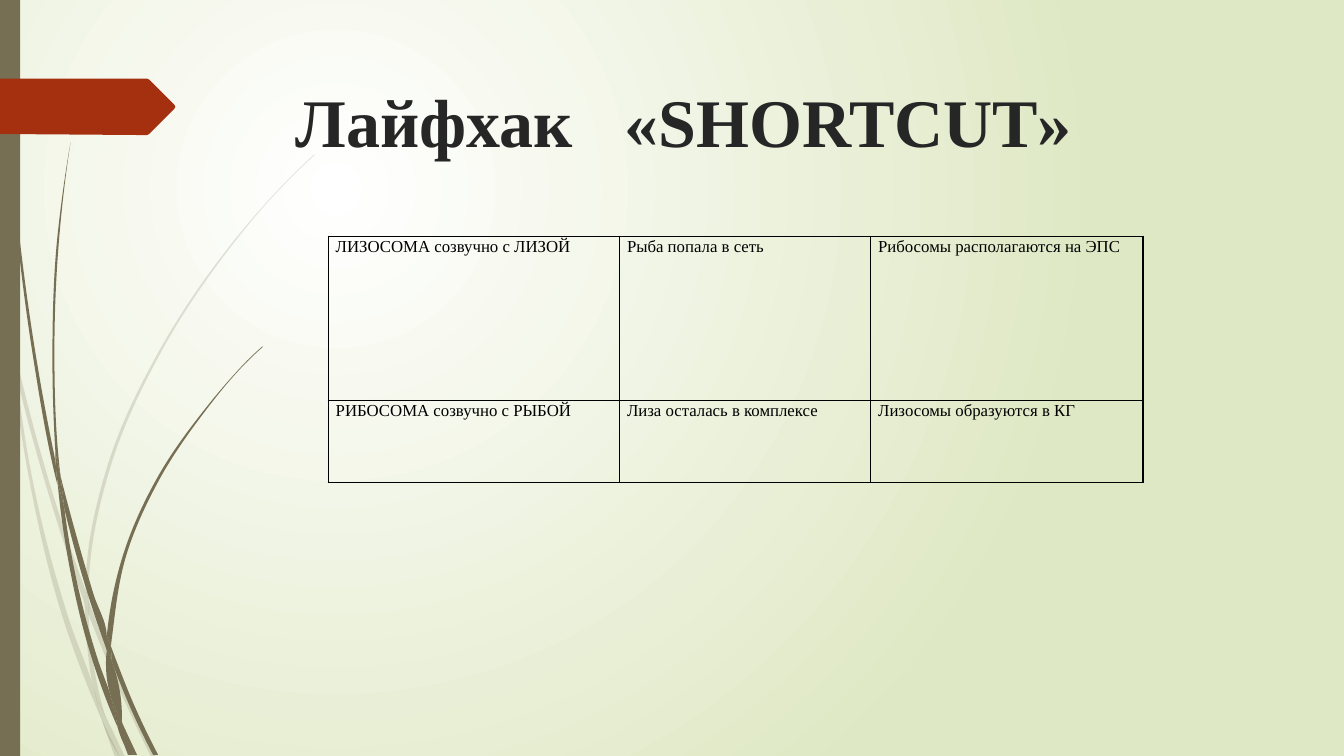
"""Builds the biology mnemonic slide with its grass decoration and table."""
from dataclasses import dataclass
from lxml import etree
from pptx import Presentation
from pptx import util as u
from pptx.dml import color
from pptx.enum import shapes, text
from pptx.oxml import ns

COLORS: dict[str, str] = {
    "glow": "FFFFFF", "meadow": "DFE8C4", "grass": "766F54",
    "marker": "A53010", "heading": "262626", "ink": "000000",
}
FONT = "Times New Roman"
GRID = u.Pt(0.72)
FINENESS = 100
Points = list[tuple[int, int]]


@dataclass(frozen=True)
class Blade:
    """A piece of grass: one edge going out and the other coming back."""
    out: Points
    back: Points


@dataclass(frozen=True)
class Tuft:
    """Blades that share one opacity in percent."""
    opacity: int
    blades: list[Blade]


PALE = Tuft(20, [
    Blade([(11, 350), (9, 322), (0, 282)], [(0, 299), (10, 344)]),
    Blade([(17, 376), (58, 522), (84, 599)], [(85, 586), (62, 520), (14, 345)]),
    Blade([(88, 610), (123, 694), (150, 751)],
          [(155, 751), (127, 692), (92, 607), (88, 596)]),
    Blade([(105, 711), (119, 751)], [(124, 751)]),
    Blade([(11, 350), (28, 470), (65, 621), (92, 693), (101, 714)],
          [(99, 707), (93, 683), (70, 619), (31, 469), (17, 376)]),
    Blade([(84, 599), (87, 646), (93, 683), (96, 692), (105, 711)],
          [(103, 706), (91, 646), (88, 610), (88, 608)]),
    Blade([(85, 586), (85, 584), (107, 461), (158, 348), (228, 244),
           (268, 197), (289, 175), (312, 153)],
          [(312, 154), (290, 175), (268, 198), (229, 245), (160, 349),
           (110, 462), (88, 584), (88, 596)]),
    Blade([(101, 714), (114, 751)], [(119, 751)]),
    Blade([(84, 599), (88, 608)], [(88, 610), (88, 596), (85, 586)]),
    Blade([(93, 683), (99, 707), (101, 714), (119, 751)], [(105, 711), (96, 692)]),
])
DARK = Tuft(100, [
    Blade([(3, 0), (4, 48), (7, 110), (17, 233), (33, 355), (56, 477), (57, 481)],
          [(55, 457), (36, 355), (19, 232), (8, 109), (5, 48), (4, 0)]),
    Blade([(64, 505), (88, 592), (106, 645)],
          [(106, 633), (106, 631), (93, 590), (60, 472)]),
    Blade([(111, 656), (132, 708), (152, 749)],
          [(157, 749), (136, 706), (113, 649), (110, 641)]),
    Blade([(57, 477), (68, 557), (93, 659), (111, 708), (117, 722)],
          [(116, 717), (110, 691), (98, 657), (72, 556), (64, 505)]),
    Blade([(60, 472), (58, 453), (54, 349), (58, 245), (63, 193), (70, 141)],
          [(70, 141), (62, 193), (56, 245), (52, 349), (55, 449)]),
    Blade([(122, 719), (133, 749)], [(136, 749)]),
    Blade([(55, 449), (55, 453), (57, 477)], [(64, 505), (60, 472)]),
    Blade([(106, 631), (122, 551), (156, 474), (204, 405), (231, 373),
           (245, 358), (260, 344)],
          [(261, 344), (245, 359), (231, 374), (205, 406), (158, 476),
           (125, 552), (111, 633), (110, 641)]),
    Blade([(117, 722), (127, 749)], [(131, 749)]),
    Blade([(106, 645), (110, 691), (116, 706), (122, 719)],
          [(121, 716), (111, 656), (109, 651)]),
    Blade([(106, 631), (106, 645), (109, 651), (111, 656)], [(110, 641)]),
    Blade([(110, 691), (116, 717), (117, 722), (130, 749)],
          [(133, 749), (122, 719), (116, 706)]),
])
MARKER: Points = [(0, 78), (146, 78), (148, 79), (173, 104), (174, 106),
                  (173, 108), (148, 133), (146, 134), (136, 134), (0, 133)]
MNEMONICS = [
    ["ЛИЗОСОМА созвучно с ЛИЗОЙ", "Рыба попала в сеть", "Рибосомы располагаются на ЭПС"],
    ["РИБОСОМА созвучно с РЫБОЙ", "Лиза осталась в комплексе", "Лизосомы образуются в КГ"],
]
COLUMN_WIDTHS = [208.1, 179.4, 194.6]
ROW_HEIGHTS = [117.1, 58.6]


def rgb(name: str) -> color.RGBColor:
    """Look a colour up by name."""
    return color.RGBColor.from_string(COLORS[name])


def edge_handles(edge: Points) -> list[tuple[complex, complex]]:
    """Return the Bezier handles of each segment, relative to its ends."""
    steps = [complex(*b) - complex(*a) for a, b in zip(edge, edge[1:])]
    if not steps:
        return []
    sizes = [abs(step) for step in steps]
    ways = [step / size for step, size in zip(steps, sizes)]
    inner = [(ways[i] * sizes[i + 1] + ways[i + 1] * sizes[i]) / (sizes[i] + sizes[i + 1])
             for i in range(len(steps) - 1)]
    first = 2 * ways[0] - inner[0] if inner else ways[0]
    final = 2 * ways[-1] - inner[-1] if inner else ways[-1]
    slopes = [first, *inner, final]
    return [(a * size / 3, -b * size / 3) for a, b, size in zip(slopes, slopes[1:], sizes)]


def paint(shape, name: str, opacity: int = 100) -> None:
    """Give a shape a flat fill without line or shadow."""
    shape.shadow.inherit = False
    shape.line.fill.background()
    shape.fill.solid()
    shape.fill.fore_color.rgb = rgb(name)
    if opacity < 100:
        tone = shape.element.find(".//" + ns.qn("a:srgbClr"))
        etree.SubElement(tone, ns.qn("a:alpha"), val=str(opacity * 1000))


def draw_outline(parent, points: Points, name: str, opacity: int = 100):
    """Draw a closed filled outline given in grid units."""
    fine = [(x * FINENESS, y * FINENESS) for x, y in points]
    builder = parent.build_freeform(*fine[0], scale=GRID / FINENESS)
    builder.add_line_segments(fine[1:], close=True)
    outline = builder.convert_to_shape()
    paint(outline, name, opacity)
    return outline


def draw_blade(parent, blade: Blade, opacity: int) -> None:
    """Draw a blade and bend its straight segments into curves."""
    outline = draw_outline(parent, blade.out + blade.back, "grass", opacity)
    handles = [*edge_handles(blade.out), None, *edge_handles(blade.back)]
    ends = list(outline.element.iter(ns.qn("a:pt")))
    for start, end, handle in zip(ends, ends[1:], handles):
        if handle is None:
            continue
        line = end.getparent()
        curve = etree.Element(ns.qn("a:cubicBezTo"))
        for anchor, shift in zip((start, end), handle):
            etree.SubElement(curve, ns.qn("a:pt"),
                             x=str(round(int(anchor.get("x")) + shift.real * FINENESS)),
                             y=str(round(int(anchor.get("y")) + shift.imag * FINENESS)))
        line.getparent().replace(line, curve)
        curve.append(end)


def draw_background(slide) -> None:
    """Fill the background with a circular glow."""
    fill = slide.background.fill
    fill.gradient()
    for stop, name in zip(fill.gradient_stops, ("glow", "meadow")):
        stop.color.rgb = rgb(name)
    gradient = slide.element.find(".//" + ns.qn("a:gradFill"))
    gradient.remove(gradient.find(ns.qn("a:lin")))
    circle = etree.SubElement(gradient, ns.qn("a:path"))
    circle.set("path", "circle")
    etree.SubElement(circle, ns.qn("a:fillToRect"), l="50000", t="50000",
                     r="100000", b="100000")


def format_paragraph(paragraph, size: float, name: str, bold: bool = False) -> None:
    """Format a left-aligned paragraph and its runs."""
    paragraph.alignment = text.PP_ALIGN.LEFT
    paragraph.line_spacing = 1.07
    paragraph.space_before = u.Pt(0)
    paragraph.space_after = u.Pt(8)
    for run in paragraph.runs:
        run.font.name, run.font.size, run.font.bold = FONT, u.Pt(size), bold
        run.font.color.rgb = rgb(name)


def write_title(slide) -> None:
    """Place and format the title, spacing its two parts with a tab stop."""
    title = slide.shapes.title
    title.left, title.top, title.width, title.height = map(u.Pt, (204, 49, 702, 100.8))
    frame = title.text_frame
    frame.text = "Лайфхак\t«SHORTCUT»"
    frame.word_wrap = True
    frame.auto_size = text.MSO_AUTO_SIZE.NONE
    frame.vertical_anchor = text.MSO_ANCHOR.TOP
    heading = frame.paragraphs[0]
    format_paragraph(heading, 48.6, "heading", True)
    tabs = etree.SubElement(heading._p.get_or_add_pPr(), ns.qn("a:tabLst"))
    etree.SubElement(tabs, ns.qn("a:tab"), pos=str(u.Pt(235)), algn="l")


def draw_table(slide) -> None:
    """Draw the table of mnemonics."""
    table = slide.shapes.add_table(
        len(ROW_HEIGHTS), len(COLUMN_WIDTHS), u.Pt(234.4), u.Pt(168.8),
        u.Pt(sum(COLUMN_WIDTHS)), u.Pt(sum(ROW_HEIGHTS))).table
    table.first_row = table.horz_banding = False
    for column, width in zip(table.columns, COLUMN_WIDTHS):
        column.width = u.Pt(width)
    for row, height, phrases in zip(table.rows, ROW_HEIGHTS, MNEMONICS):
        row.height = u.Pt(height)
        for cell, phrase in zip(row.cells, phrases):
            cell.text_frame.text = phrase
            cell.margin_left = cell.margin_right = u.Pt(5.4)
            cell.margin_top = cell.margin_bottom = u.Pt(0)
            format_paragraph(cell.text_frame.paragraphs[0], 12, "ink")
            properties = cell._tc.get_or_add_tcPr()
            for side in ("lnL", "lnR", "lnT", "lnB"):
                border = etree.SubElement(properties, ns.qn("a:" + side), w=str(u.Pt(1)))
                solid = etree.SubElement(border, ns.qn("a:solidFill"))
                etree.SubElement(solid, ns.qn("a:srgbClr"), val=COLORS["ink"])
            cell.fill.background()


def main() -> None:
    """Build and save the slide."""
    deck = Presentation()
    deck.slide_width, deck.slide_height = u.Pt(960), u.Pt(540)
    slide = deck.slides.add_slide(deck.slide_layouts[5])
    draw_background(slide)
    for tuft in (PALE, DARK):
        group = slide.shapes.add_group_shape()
        for blade in tuft.blades:
            draw_blade(group.shapes, blade, tuft.opacity)
    paint(slide.shapes.add_shape(shapes.MSO_SHAPE.RECTANGLE, u.Pt(0), u.Pt(0),
                                 u.Pt(14.4), u.Pt(540)), "grass")
    draw_outline(slide.shapes, MARKER, "marker")
    write_title(slide)
    draw_table(slide)
    deck.save("out.pptx")


if __name__ == "__main__":
    main()
